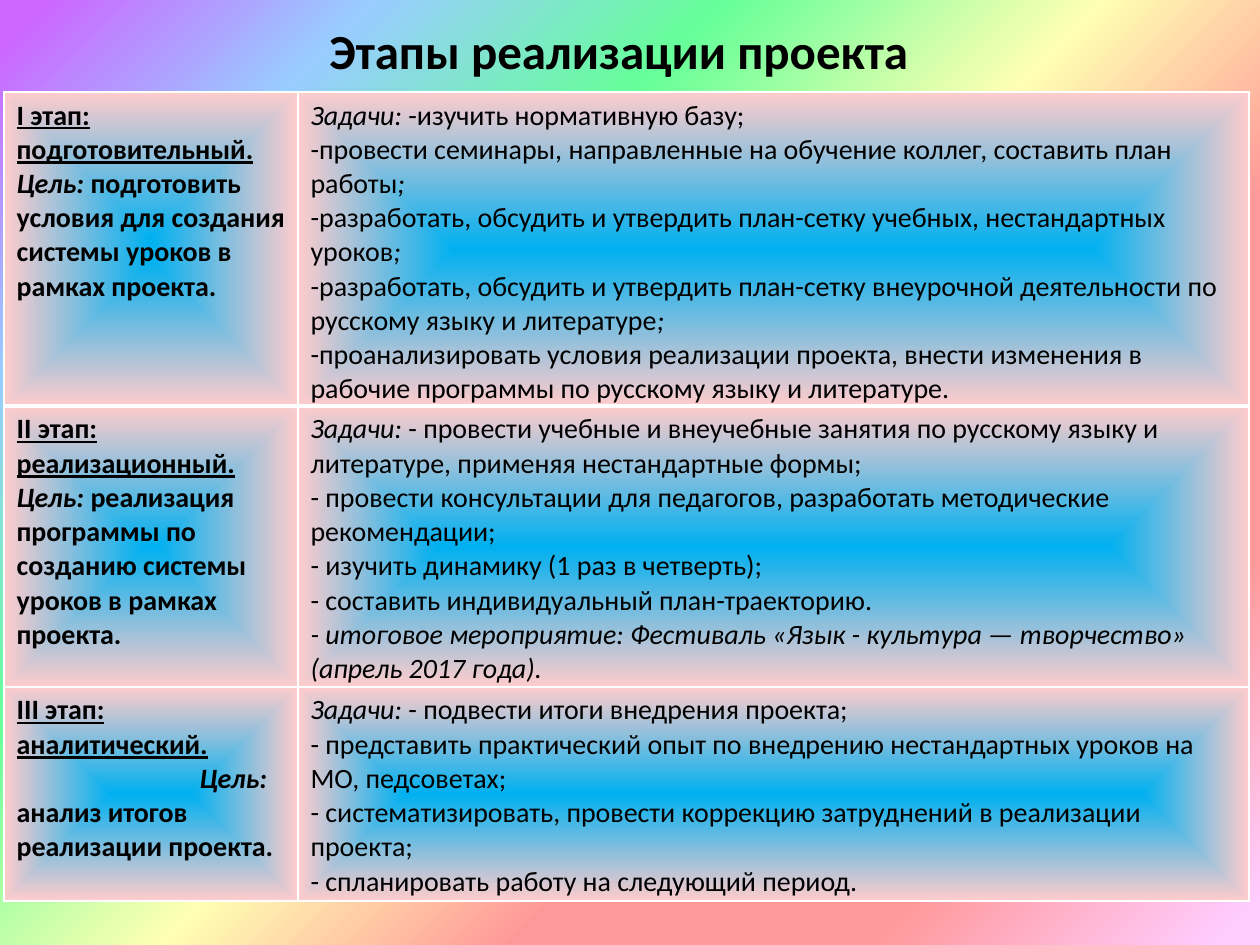
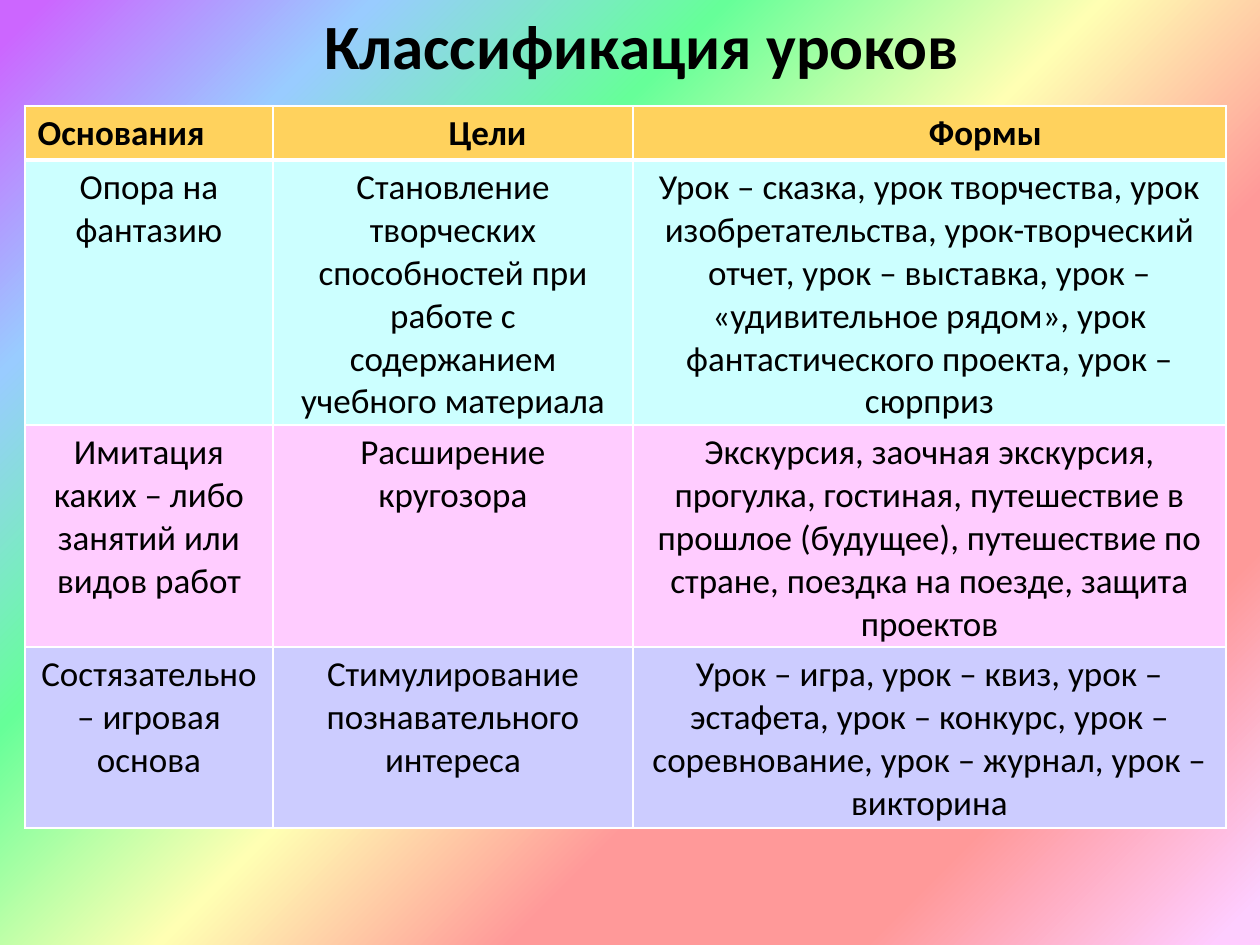
from dataclasses import dataclass

from lxml.etree import SubElement
from pptx import Presentation
from pptx.dml.color import RGBColor
from pptx.enum.text import PP_ALIGN
from pptx.oxml import parse_xml
from pptx.oxml.ns import nsdecls, qn
from pptx.util import Pt

SCALE = 914400 / 126


def px(n):
    return round(n * SCALE)


@dataclass(frozen=True)
class Theme:
    font: str = "Calibri"
    text: str = "000000"
    border: str = "FFFFFF"
    thin: int = 1
    thick: int = 3
    header: str = "FFD25D"
    rows: tuple = ("CCFFFF", "FFCCFF", "CCCCFF")
    glow: tuple = ((0, "00B0F0"), (100, "FFCCCC"))
    rainbow: tuple = ((2, "CC66FF"), (17, "99CCFF"), (33, "66FF99"), (50, "FFFFB3"),
                      (66, "FF9999"), (82, "FF9999"), (98, "FFCCFF"))
    stage_title: int = 28
    lesson_title: int = 36
    stage_text: int = 16
    lesson_text: int = 20


def gradient(stops, direction):
    gs = "".join(f'<a:gs pos="{pos * 1000}"><a:srgbClr val="{color}"/></a:gs>'
                 for pos, color in stops)
    return parse_xml(f'<a:gradFill {nsdecls("a")} rotWithShape="1">'
                     f"<a:gsLst>{gs}</a:gsLst>{direction}</a:gradFill>")


DIAGONAL = '<a:lin ang="2700000" scaled="0"/>'
FROM_CENTRE = ('<a:path path="shape"><a:fillToRect l="50000" t="50000" '
               'r="50000" b="50000"/></a:path>')


def write(p, text, size, font, color, style=""):
    """Add text to a paragraph; style letters: b bold, i italic, u underline."""
    for i, line in enumerate(text.split("\n")):
        if i:
            p.add_line_break()
        if not line:
            continue
        r = p.add_run()
        r.text = line
        f = r.font
        f.name, f.size = font, Pt(size)
        f.color.rgb = RGBColor.from_string(color)
        f.bold, f.italic, f.underline = (c in style for c in "biu")


class Deck:
    def __init__(self, prs, theme):
        self.prs, self.theme, self.s = prs, theme, None

    def slide(self):
        self.s = self.prs.slides.add_slide(self.prs.slide_layouts[6])
        self.s.background.fill.solid()
        bg = self.s.element.find(".//" + qn("p:bgPr"))
        bg.replace(bg[0], gradient(self.theme.rainbow, DIAGONAL))

    def text(self, p, text, size, style=""):
        write(p, text, size, self.theme.font, self.theme.text, style)

    def title(self, text, x, y, w, h, size):
        tf = self.s.shapes.add_textbox(px(x), px(y), px(w), px(h)).text_frame
        tf.word_wrap = False
        self.text(tf.paragraphs[0], text, size, "b")

    def table(self, x, y, widths, heights):
        """Add a table with white borders, thick under its first row."""
        frame = self.s.shapes.add_table(len(heights), len(widths), px(x), px(y),
                                        px(sum(widths)), px(sum(heights)))
        table = frame.table
        table.first_row = table.horz_banding = False
        for col, w in zip(table.columns, widths):
            col.width = px(w)
        for i, (row, h) in enumerate(zip(table.rows, heights)):
            row.height = px(h)
            for cell in row.cells:
                cell.margin_bottom = 0
                self.borders(cell, top_thick=i == 1, bottom_thick=i == 0)
        return table

    def borders(self, cell, top_thick, bottom_thick):
        t = self.theme
        tcPr = cell._tc.get_or_add_tcPr()
        for side, thick in (("L", False), ("R", False), ("T", top_thick), ("B", bottom_thick)):
            width = Pt(t.thick if thick else t.thin)
            ln = SubElement(tcPr, qn(f"a:ln{side}"), w=str(width))
            SubElement(SubElement(ln, qn("a:solidFill")), qn("a:srgbClr"), val=t.border)

    def glow(self, cell):
        cell._tc.get_or_add_tcPr().append(gradient(self.theme.glow, FROM_CENTRE))

    def fill(self, cell, color):
        cell.fill.solid()
        cell.fill.fore_color.rgb = RGBColor.from_string(color)

    def paragraphs(self, cell, paragraphs, size, tabs=()):
        """Fill a cell with paragraphs, each a list of (text, style) runs."""
        tf = cell.text_frame
        for i, runs in enumerate(paragraphs):
            p = tf.add_paragraph() if i else tf.paragraphs[0]
            if tabs:
                tab_list = SubElement(p._p.get_or_add_pPr(), qn("a:tabLst"))
                for stop in tabs:
                    SubElement(tab_list, qn("a:tab"), pos=str(px(stop)), algn="l")
            for text, style in runs:
                self.text(p, text, size, style)

    def label(self, cell, text, size, style="", align=PP_ALIGN.CENTER, indent=0):
        p = cell.text_frame.paragraphs[0]
        p.alignment = align
        if indent:
            p._p.get_or_add_pPr().set("marL", str(px(indent)))
        self.text(p, text, size, style)


# Each stage: row height, tab stops, name and goal, tasks
GOAL, TASKS = ("Цель: ", "bi"), ("Задачи: ", "i")
STAGES = [
    (314, (),
     [[("I этап: подготовительный.", "bu")],
      [GOAL, ("подготовить условия для создания системы уроков в рамках проекта.", "b")]],
     [[TASKS, ("-изучить нормативную базу;", "")],
      [("-провести семинары, направленные на обучение коллег, составить план работы", ""),
       (";", "i")],
      [("-разработать, обсудить и утвердить план-сетку учебных, нестандартных уроков", ""),
       (";", "i")],
      [("-разработать, обсудить и утвердить план-сетку внеурочной деятельности "
        "по русскому языку и литературе", ""), (";", "i")],
      [("-проанализировать условия реализации проекта, внести изменения в рабочие "
        "программы по русскому языку и литературе.", "")]]),
    (281, (),
     [[("II этап:\nреализационный.\n", "bu"), GOAL,
       ("реализация программы по созданию системы уроков в рамках проекта.", "b")]],
     [[TASKS, ("- провести учебные и внеучебные занятия по русскому языку и литературе, "
               "применяя нестандартные формы;", "")],
      [("- провести консультации для педагогов, разработать методические рекомендации;", "")],
      [("- изучить динамику (1 раз в четверть);", "")],
      [("- составить индивидуальный план-траекторию.", "")],
      [("- итоговое мероприятие: Фестиваль «Язык - культура — творчество» "
        "(апрель 2017 года).", "i")]]),
    (214, (183,),
     [[("III этап:\nаналитический.\n\t", "bu"), GOAL,
       ("анализ итогов реализации проекта.", "b")]],
     [[TASKS, ("- подвести итоги внедрения проекта;", "")],
      [("- представить практический опыт по внедрению нестандартных уроков на МО, "
        "педсоветах;", "")],
      [("- систематизировать, провести коррекцию затруднений в реализации проекта;", "")],
      [("- спланировать работу на следующий период.", "")]]),
]

# Each heading: text, alignment, left indent
HEADINGS = [("Основания", PP_ALIGN.LEFT, 0), ("Цели", PP_ALIGN.CENTER, 69),
            ("Формы", PP_ALIGN.CENTER, 112)]
LESSONS = [
    ("Опора на фантазию",
     "Становление творческих способностей при работе с содержанием учебного материала",
     "Урок – сказка, урок творчества, урок изобретательства, урок-творческий отчет, "
     "урок – выставка, урок – «удивительное рядом», урок фантастического проекта, "
     "урок – сюрприз"),
    ("Имитация каких – либо занятий или видов работ",
     "Расширение кругозора",
     "Экскурсия, заочная экскурсия, прогулка, гостиная, путешествие в прошлое (будущее), "
     "путешествие по стране, поездка на поезде, защита проектов"),
    ("Состязательно – игровая основа",
     "Стимулирование познавательного интереса",
     "Урок – игра, урок – квиз, урок – эстафета, урок – конкурс, урок – соревнование, "
     "урок – журнал, урок – викторина"),
]


def stages_slide(deck):
    size = deck.theme.stage_text
    deck.slide()
    deck.title("Этапы реализации проекта", 317, 14, 625, 72, deck.theme.stage_title)
    table = deck.table(4, 92, (294, 951), [stage[0] for stage in STAGES])
    for row, (_, tabs, goal, tasks) in zip(table.rows, STAGES):
        left, right = row.cells
        deck.paragraphs(left, goal, size, tabs)
        deck.paragraphs(right, tasks, size)
        deck.glow(left)
        deck.glow(right)


def lessons_slide(deck):
    theme = deck.theme
    size = theme.lesson_text
    deck.slide()
    deck.title("Классификация уроков", 312, 0, 667, 89, theme.lesson_title)
    table = deck.table(25, 106, (248, 360, 593), (54, 265, 222, 181))
    for cell, (text, align, indent) in zip(table.rows[0].cells, HEADINGS):
        deck.label(cell, text, size, "b", align, indent)
        deck.fill(cell, theme.header)
    for i, (lesson, color) in enumerate(zip(LESSONS, theme.rows), start=1):
        for cell, text in zip(table.rows[i].cells, lesson):
            deck.label(cell, text, size)
            deck.fill(cell, color)


def main():
    prs = Presentation()
    prs.slide_width, prs.slide_height = px(1260), px(945)
    deck = Deck(prs, Theme())
    stages_slide(deck)
    lessons_slide(deck)
    prs.save("out.pptx")


if __name__ == "__main__":
    main()
